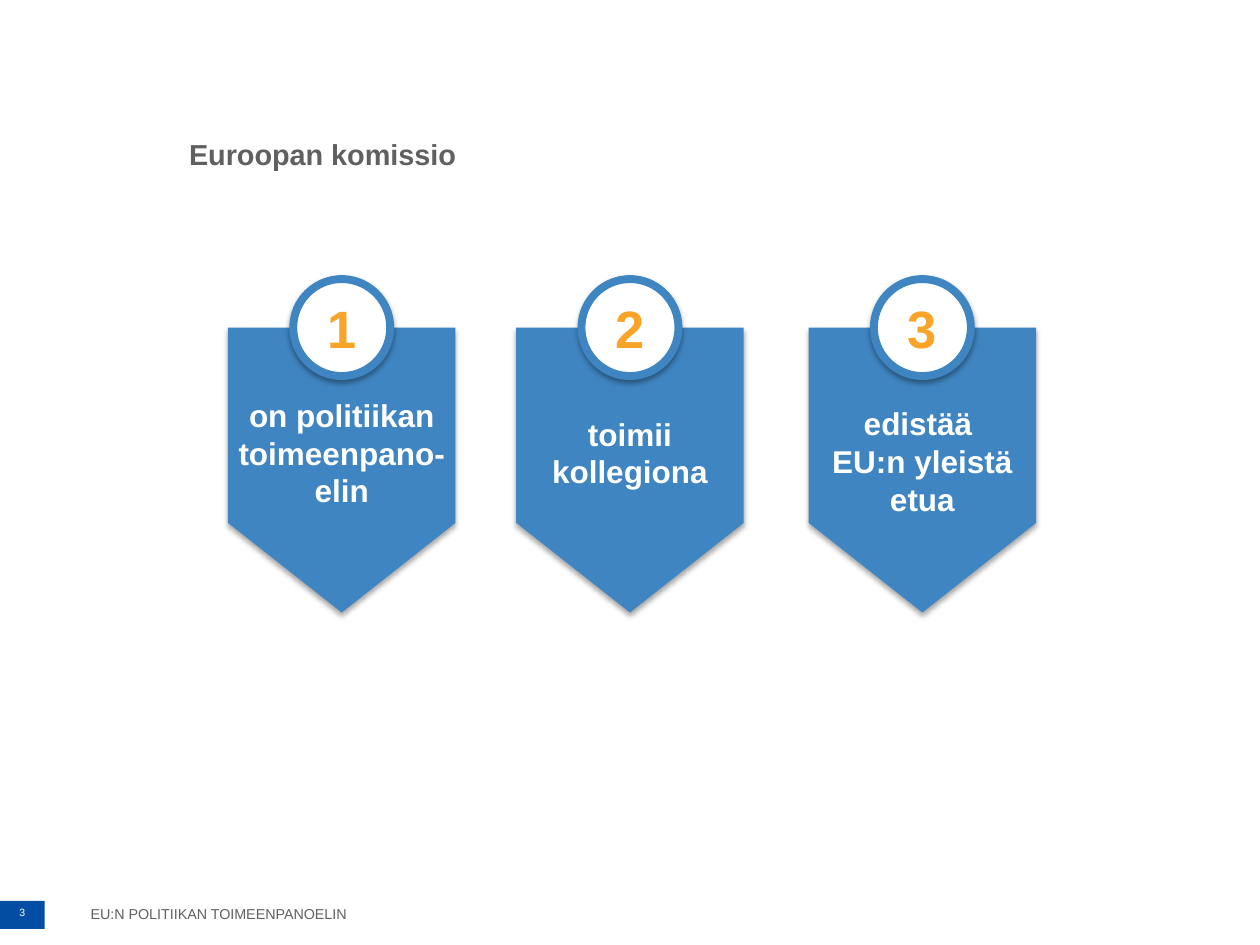
from lxml import etree
from pptx import Presentation
from pptx.dml.color import RGBColor
from pptx.enum.shapes import MSO_SHAPE
from pptx.enum.text import MSO_ANCHOR, MSO_AUTO_SIZE, PP_ALIGN
from pptx.oxml.ns import qn
from pptx.util import Pt

RECT, OVAL = MSO_SHAPE.RECTANGLE, MSO_SHAPE.OVAL
TOP, MIDDLE = MSO_ANCHOR.TOP, MSO_ANCHOR.MIDDLE
LEFT, CENTER = PP_ALIGN.LEFT, PP_ALIGN.CENTER
NO_FIT = MSO_AUTO_SIZE.NONE

BLUE = RGBColor(0x3F, 0x85, 0xC1)
NAVY = RGBColor(0x03, 0x4E, 0xA2)
ORANGE = RGBColor(0xF7, 0xA4, 0x28)
GREY = RGBColor(0x60, 0x60, 0x60)
WHITE = RGBColor(0xFF, 0xFF, 0xFF)


def write(shape, lines, size, color, bold=False, align=CENTER,
          anchor=TOP, inset=(7.2, 3.6), wrap=True):
    """Fill the shape with one paragraph, with a line break between lines."""
    frame = shape.text_frame
    frame.word_wrap = wrap
    frame.auto_size = NO_FIT
    frame.vertical_anchor = anchor
    frame.margin_left = frame.margin_right = Pt(inset[0])
    frame.margin_top = frame.margin_bottom = Pt(inset[1])
    para = frame.paragraphs[0]
    para.alignment = align
    for i, line in enumerate(lines):
        if i:
            para.add_line_break()
        run = para.add_run()
        run.text = line
        run.font.name = "Arial"
        run.font.size = Pt(size)
        run.font.bold = bold
        run.font.color.rgb = color
    return para


def add_shadow(shape):
    shape.shadow.inherit = False
    effects = shape._element.spPr.find(qn("a:effectLst"))
    outer = etree.SubElement(effects, qn("a:outerShdw"), blurRad=str(Pt(3.1)),
                             dist=str(Pt(1.8)), dir="5400000", rotWithShape="0")
    black = etree.SubElement(outer, qn("a:srgbClr"), val="000000")
    etree.SubElement(black, qn("a:alpha"), val="35000")


prs = Presentation()
prs.slide_width, prs.slide_height = Pt(720), Pt(540)
slide = prs.slides.add_slide(prs.slide_layouts[5])
shapes = slide.shapes

# Title
title = shapes.title
title.left, title.top, title.width, title.height = Pt(100.8), Pt(74.2), Pt(486), Pt(25.2)
write(title, ["Euroopan komissio"], 16.5, GREY, bold=True, align=LEFT)

# Footer and page number
foot = shapes.add_textbox(Pt(42.5), Pt(509), Pt(165), Pt(22.3))
para = write(foot, ["EU:N POLITIIKAN TOIMEENPANOELIN"], 8.2, GREY, wrap=False)
para.line_spacing = 1.5

page = shapes.add_shape(RECT, Pt(0), Pt(514.8), Pt(25.5), Pt(16))
page.shadow.inherit = False
page.fill.solid()
page.fill.fore_color.rgb = NAVY
page.line.fill.background()
write(page, ["3"], 6, WHITE, inset=(5, 2.9))

# Numbered pennants: left edge, top of the text box, lines
WIDTH, DISC = 130, 55.4
EDGE, SIDE, TIP = 187.2, 298.8, 350
pennants = [
    (130.3, 216, ["on politiikan toimeenpano-elin"]),
    (295, 216, ["toimii kollegiona"]),
    (462.1, 221, ["edistää ", "EU:n yleistä etua"]),
]
for num, (left, top, lines) in enumerate(pennants, 1):
    mid, right = left + WIDTH / 2, left + WIDTH
    form = shapes.build_freeform(Pt(left), Pt(EDGE))
    points = [(right, EDGE), (right, SIDE), (mid, TIP), (left, SIDE)]
    form.add_line_segments([(Pt(x), Pt(y)) for x, y in points], close=True)
    flag = form.convert_to_shape()
    flag.fill.solid()
    flag.fill.fore_color.rgb = BLUE
    flag.line.fill.background()
    add_shadow(flag)

    label = shapes.add_textbox(Pt(left), Pt(top), Pt(WIDTH), Pt(85))
    write(label, lines, 18, WHITE, bold=True, anchor=MIDDLE, inset=(5, 2.9))

    disc = shapes.add_shape(OVAL, Pt(mid - DISC / 2), Pt(EDGE - DISC / 2),
                            Pt(DISC), Pt(DISC))
    disc.fill.solid()
    disc.fill.fore_color.rgb = WHITE
    disc.line.color.rgb = BLUE
    disc.line.width = Pt(4.5)
    add_shadow(disc)
    write(disc, [str(num)], 30, ORANGE, bold=True, anchor=MIDDLE)

prs.save("out.pptx")
